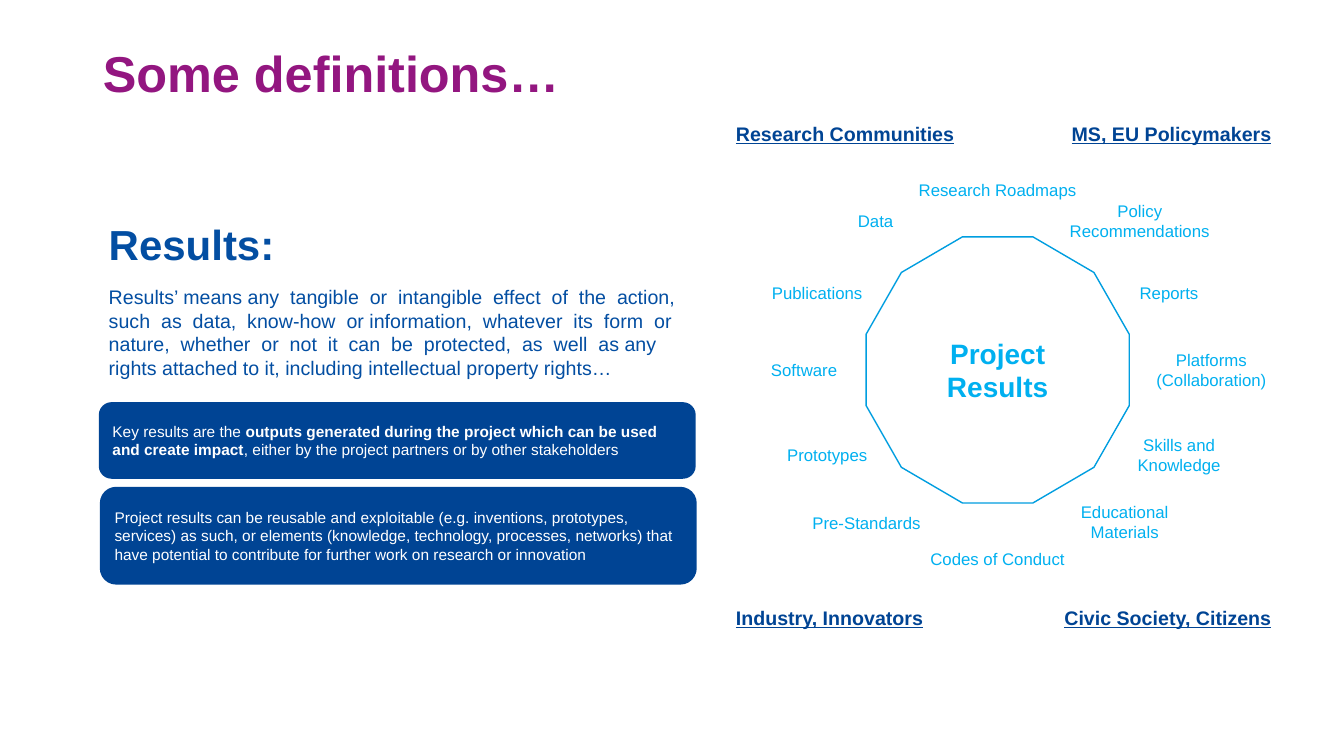
from dataclasses import dataclass

from pptx import Presentation
from pptx.dml.color import RGBColor
from pptx.enum.shapes import MSO_SHAPE
from pptx.enum.text import MSO_ANCHOR, MSO_AUTO_SIZE, PP_ALIGN
from pptx.util import Inches, Pt

LEFT, CENTER, RIGHT = PP_ALIGN.LEFT, PP_ALIGN.CENTER, PP_ALIGN.RIGHT
TOP, MIDDLE, BOTTOM = MSO_ANCHOR.TOP, MSO_ANCHOR.MIDDLE, MSO_ANCHOR.BOTTOM
ROUNDED, DODECAGON = MSO_SHAPE.ROUNDED_RECTANGLE, MSO_SHAPE.DODECAGON

# Content
TITLE = "Some definitions…"
HEADING = "Results:"
DEFINITION = (
    "Results’ means any  tangible  or  intangible  effect  of  the  action,  "
    "such  as  data,  know-how  or information,  whatever  its  form  or  "
    "nature,  whether  or  not  it  can  be  protected,  as  well  as any "
    "rights attached to it, including intellectual property rights…"
)
# Cards: left, top, height, runs of (text, bold)
CARDS = [
    (0.98, 3.99, 0.76, [
        ("Key results are the ", False),
        ("outputs generated during the project which can be used and create impact", True),
        (", either by the project partners or by other stakeholders", False),
    ]),
    (0.99, 4.83, 0.97, [
        ("Project results can be reusable and exploitable (e.g. inventions, prototypes, "
         "services) as such, or elements (knowledge, technology, processes, networks) that "
         "have potential to contribute for further work on research or innovation", False),
    ]),
]
HUB = "Project Results"
# Result types, clockwise from the top: text, left, top, lines
RESULT_TYPES = [
    ("Research Roadmaps", 9.01, 1.73, 1),
    ("Policy Recommendations", 10.42, 1.94, 2),
    ("Reports", 10.71, 2.76, 1),
    ("Platforms (Collaboration)", 11.13, 3.42, 2),
    ("Skills and Knowledge", 10.81, 4.26, 2),
    ("Educational Materials", 10.27, 4.93, 2),
    ("Codes of Conduct", 9.01, 5.39, 1),
    ("Pre-Standards", 7.71, 5.04, 1),
    ("Prototypes", 7.32, 4.36, 1),
    ("Software", 7.09, 3.52, 1),
    ("Publications", 7.22, 2.76, 1),
    ("Data", 7.8, 2.04, 1),
]
# Audiences in the corners, row by row
AUDIENCES = [
    ["Research Communities", "MS, EU Policymakers"],
    ["Industry, Innovators", "Civic Society, Citizens"],
]


@dataclass(frozen=True)
class Theme:
    font: str = "Arial"
    purple: str = "931680"
    blue: str = "034EA2"
    navy: str = "004494"
    sky: str = "00B0F0"
    outline: str = "009EE0"
    white: str = "FFFFFF"
    title: int = 36
    heading: int = 30
    hub: int = 20
    body: int = 14
    label: int = 12
    card: int = 11


THEME = Theme()


def rgb(value):
    return RGBColor.from_string(value)


def write(s, text, size, color, bold=False, underline=None, align=LEFT,
          anchor=TOP, spacing=None, bottom=0.05):
    """Fill a shape with one paragraph: a string or a list of (text, bold)."""
    tf = s.text_frame
    tf.word_wrap = True
    tf.auto_size = MSO_AUTO_SIZE.NONE
    tf.vertical_anchor = anchor
    tf.margin_left = tf.margin_right = Inches(0.1)
    tf.margin_top, tf.margin_bottom = Inches(0.05), Inches(bottom)
    p = tf.paragraphs[0]
    p.alignment = align
    p.line_spacing = spacing
    p.space_before = Pt(0)
    for part, is_bold in [(text, bold)] if isinstance(text, str) else text:
        r = p.add_run()
        r.text = part
        font = r.font
        font.name, font.size = THEME.font, Pt(size)
        font.bold, font.underline = is_bold, underline
        font.color.rgb = rgb(color)


def add_text(slide, box, text, size, color, **fmt):
    s = slide.shapes.add_textbox(*map(Inches, box))
    write(s, text, size, color, **fmt)


def add_shape(slide, kind, box, fill=None, line=None):
    s = slide.shapes.add_shape(kind, *map(Inches, box))
    s.shadow.inherit = False
    if fill:
        s.fill.solid()
        s.fill.fore_color.rgb = rgb(fill)
    else:
        s.fill.background()
    if line:
        s.line.color.rgb = rgb(line)
        s.line.width = Pt(1)
    else:
        s.line.fill.background()
    return s


def main():
    prs = Presentation()
    prs.slide_width, prs.slide_height = Inches(13.33), Inches(7.5)
    slide = prs.slides.add_slide(prs.slide_layouts[5])

    # Title
    title = slide.shapes.title
    title.left, title.top = Inches(0.92), Inches(0.51)
    title.width, title.height = Inches(11.5), Inches(0.52)
    write(title, TITLE, THEME.title, THEME.purple, bold=True, anchor=BOTTOM,
          spacing=0.9, bottom=0)

    # Definition column
    column_left, column_width = 0.98, 5.92
    add_text(slide, (column_left, 2.18, 5.11, 0.5), HEADING, THEME.heading,
             THEME.blue, bold=True, spacing=0.9, bottom=0)
    add_text(slide, (column_left, 2.78, column_width, 0.98), DEFINITION,
             THEME.body, THEME.blue)
    for left, top, height, runs in CARDS:
        card = add_shape(slide, ROUNDED, (left, top, column_width, height), fill=THEME.navy)
        write(card, runs, THEME.card, THEME.white, anchor=MIDDLE)

    # Hub and the result types around it
    hub = add_shape(slide, DODECAGON, (8.59, 2.35, 2.61, 2.64), line=THEME.outline)
    write(hub, HUB, THEME.hub, THEME.sky, bold=True, align=CENTER, anchor=MIDDLE)
    for text, left, top, lines in RESULT_TYPES:
        add_text(slide, (left, top, 1.77, 0.1 + 0.2 * lines), text, THEME.label,
                 THEME.sky, align=CENTER, anchor=MIDDLE)

    # Audiences in the four corners
    for top, row in zip((1.02, 5.82), AUDIENCES):
        for left, align, text in zip((7.2, 9.99), (LEFT, RIGHT), row):
            add_text(slide, (left, top, 2.72, 0.61), text, THEME.body, THEME.navy,
                     bold=True, underline=True, align=align, anchor=MIDDLE)

    prs.save("out.pptx")


if __name__ == "__main__":
    main()
